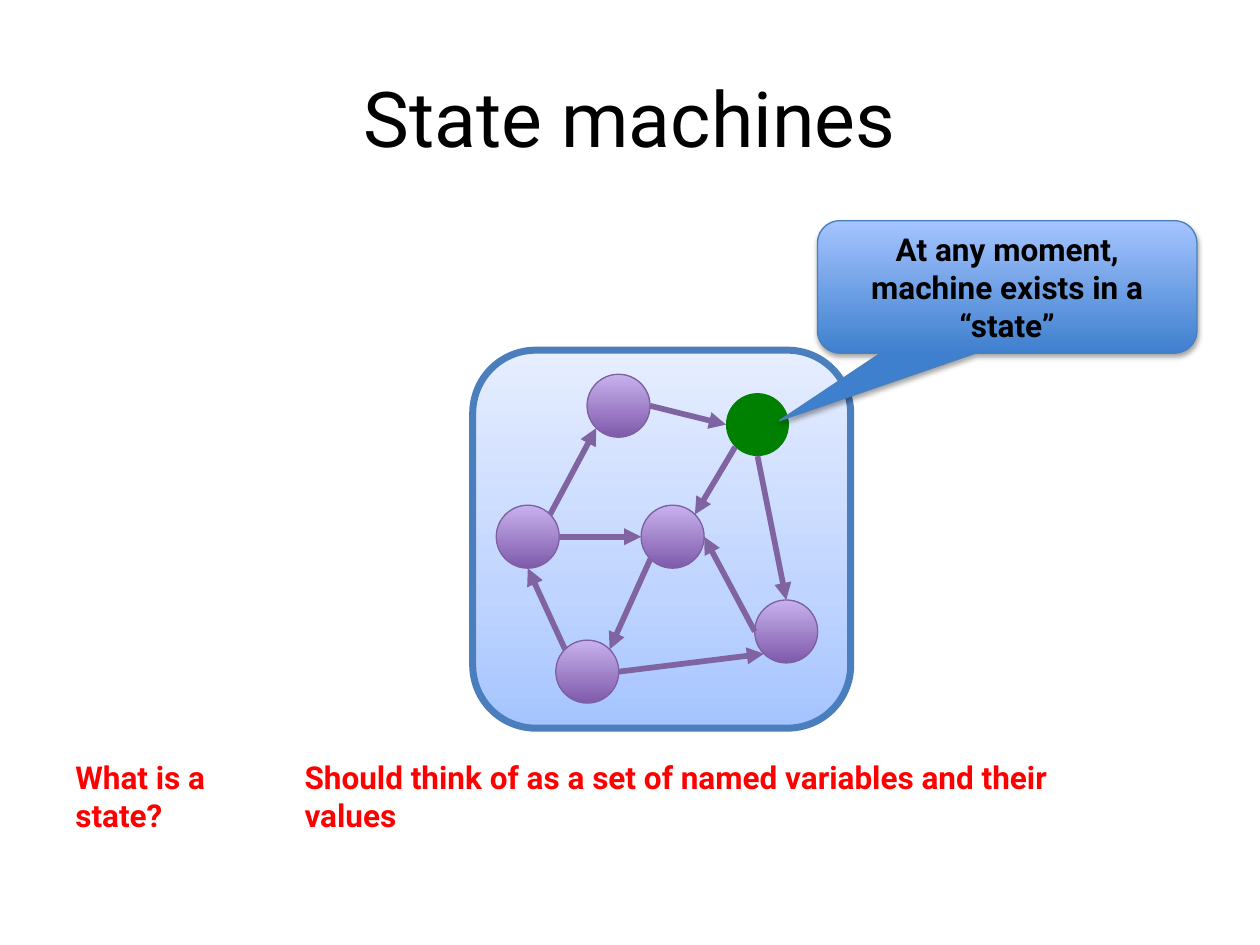
from math import cos, radians, sin
from copy import deepcopy

from lxml import etree
from pptx import Presentation
from pptx.dml.color import RGBColor
from pptx.enum.shapes import MSO_CONNECTOR, MSO_SHAPE
from pptx.enum.text import MSO_ANCHOR, PP_ALIGN
from pptx.oxml.ns import qn
from pptx.util import Cm, Pt

CENTER, LEFT, MIDDLE, TOP = PP_ALIGN.CENTER, PP_ALIGN.LEFT, MSO_ANCHOR.MIDDLE, MSO_ANCHOR.TOP
ROUNDED, OVAL = MSO_SHAPE.ROUNDED_RECTANGLE, MSO_SHAPE.OVAL
CALLOUT, STRAIGHT = MSO_SHAPE.ROUNDED_RECTANGULAR_CALLOUT, MSO_CONNECTOR.STRAIGHT

FONT = "Roboto"
COLORS = {
    "text": "000000", "note": "FF0000", "active": "008000", "outline": "4B7EBC",
    "state_outline": "7D60A0", "transition": "8064A2", "shadow": "000000",
}
GRADIENTS = {
    "machine": [(0, "A4C4FF"), (0.35, "BFD4FF"), (1, "E6EEFF")],
    "state": [(0, "7F5BAB"), (1, "C8B0ED")],
    "callout": [(0, "3F80CE"), (1, "A4C4FF")],
}

TITLE = "State machines"
CALLOUT_TEXT = "At any moment, machine exists in a “state”"
NOTES = [
    ("What is a state?", 1.27, 4.98),
    ("Should think of as a set of named variables and their values", 5.89, 16.89),
]
NOTE_TOP, NOTE_HEIGHT = 15.16, 1.02

STATE_SIZE = 1.27
STATES = {
    "west": (10.64, 10.82), "south": (11.84, 13.54), "middle": (13.56, 10.82),
    "active": (15.27, 8.56), "east": (15.85, 12.73), "north": (12.47, 8.18),
}
TRANSITIONS = [
    ("west", "NE", "north", "SW"), ("active", "S", "east", "N"),
    ("south", "E", "east", "SW"), ("active", "SW", "middle", "NE"),
    ("west", "E", "middle", "W"), ("east", "W", "middle", "E"),
    ("middle", "SW", "south", "NE"), ("south", "NW", "west", "S"),
    ("north", "E", "active", "W"),
]
BEARINGS = {side: 45 * step for step, side in
            enumerate(["E", "SE", "S", "SW", "W", "NW", "N", "NE"])}


def rgb(name):
    return RGBColor.from_string(COLORS[name])


def write(frame, text, size, color, align, anchor, bold):
    frame.word_wrap = True
    frame.vertical_anchor = anchor
    paragraph = frame.paragraphs[0]
    paragraph.text = text
    paragraph.alignment = align
    paragraph.font.name = FONT
    paragraph.font.size = Pt(size)
    paragraph.font.bold = bold
    paragraph.font.color.rgb = rgb(color)


def add_filled(shapes, preset, box, gradient, outline, width):
    shape = shapes.add_shape(preset, *map(Cm, box))
    shape.shadow.inherit = False
    stops = GRADIENTS[gradient]
    shape.fill.gradient()
    shape.fill.gradient_angle = 90
    stop_list = shape._element.spPr.find(".//" + qn("a:gsLst"))
    for _ in stops[2:]:
        stop_list.append(deepcopy(stop_list[-1]))
    for stop, (position, color) in zip(shape.fill.gradient_stops, stops):
        stop.position = position
        stop.color.rgb = RGBColor.from_string(color)
    shape.line.color.rgb = rgb(outline)
    shape.line.width = Pt(width)
    return shape


def rim_point(state, side):
    x, y = STATES[state]
    angle = radians(BEARINGS[side])
    return Cm(x + STATE_SIZE / 2 * cos(angle)), Cm(y + STATE_SIZE / 2 * sin(angle))


def add_state(shapes, name):
    x, y = STATES[name]
    box = (x - STATE_SIZE / 2, y - STATE_SIZE / 2, STATE_SIZE, STATE_SIZE)
    state = add_filled(shapes, OVAL, box, "state", "state_outline", 0.75)
    if name == "active":
        state.fill.solid()
        state.fill.fore_color.rgb = rgb("active")
        state.line.fill.background()


def add_transition(shapes, source, source_side, target, target_side):
    arrow = shapes.add_connector(
        STRAIGHT, *rim_point(source, source_side), *rim_point(target, target_side))
    arrow.line.color.rgb = rgb("transition")
    arrow.line.width = Pt(3.25)
    etree.SubElement(arrow.line._get_or_add_ln(), qn("a:tailEnd"), type="triangle")
    etree.SubElement(arrow._element.spPr, qn("a:effectLst"))


def add_callout(shapes):
    callout = add_filled(shapes, CALLOUT, (16.48, 4.45, 7.65, 2.67),
                         "callout", "outline", 0.75)
    for index, value in enumerate((-0.6, 1.01, 0.17)):
        callout.adjustments[index] = value
    effects = callout._element.spPr.find(qn("a:effectLst"))
    shadow = etree.SubElement(effects, qn("a:outerShdw"), blurRad=str(Pt(3.1)),
                              dist=str(Pt(1.8)), dir="5400000", rotWithShape="0")
    tint = etree.SubElement(shadow, qn("a:srgbClr"), val=COLORS["shadow"])
    etree.SubElement(tint, qn("a:alpha"), val="35000")
    write(callout.text_frame, CALLOUT_TEXT, 18, "text", CENTER, MIDDLE, True)


def main():
    deck = Presentation()
    deck.slide_width, deck.slide_height = Cm(25.4), Cm(19.05)
    slide = deck.slides.add_slide(deck.slide_layouts[5])

    title = slide.shapes.title
    title.left, title.top, title.width, title.height = map(Cm, (1.27, 0.76, 22.86, 3.18))
    write(title.text_frame, TITLE, 44, "text", CENTER, MIDDLE, False)

    machine = slide.shapes.add_group_shape().shapes
    add_filled(machine, ROUNDED, (9.53, 7.06, 7.62, 7.62), "machine", "outline", 4)
    for name in STATES:
        add_state(machine, name)
    for transition in TRANSITIONS:
        add_transition(machine, *transition)

    add_callout(slide.shapes)
    for text, left, width in NOTES:
        note = slide.shapes.add_textbox(*map(Cm, (left, NOTE_TOP, width, NOTE_HEIGHT)))
        write(note.text_frame, text, 18, "note", LEFT, TOP, True)

    deck.save("out.pptx")


if __name__ == "__main__":
    main()
